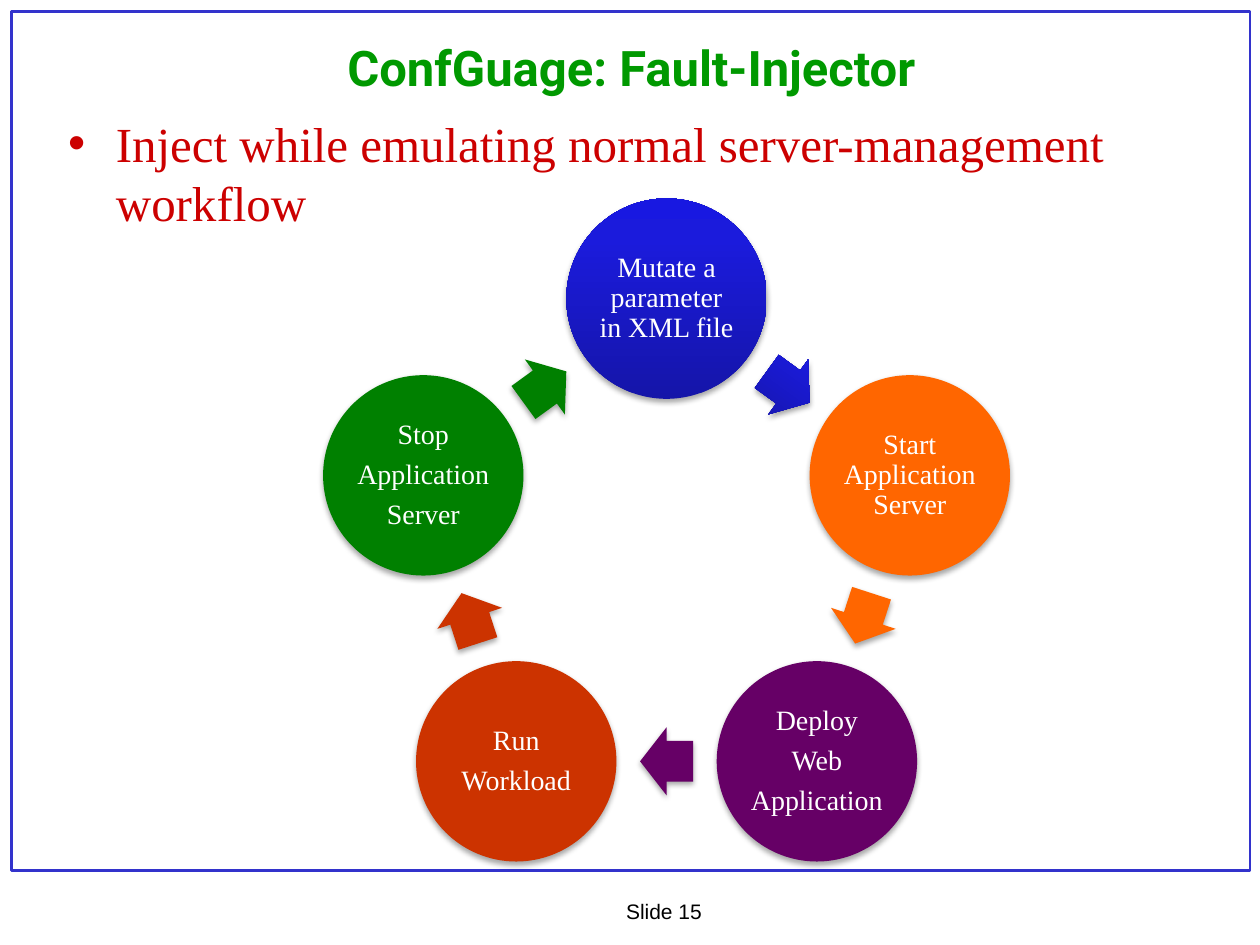
"""Build the fault-injector slide with its five-step workflow cycle."""
import math
from lxml import etree
from pptx import Presentation, util as u
from pptx.dml.color import RGBColor
from pptx.enum import shapes, text
from pptx.oxml import parse_xml
from pptx.oxml.ns import nsdecls, qn

COLORS = {
    "frame": "3333CC", "title": "009900", "body": "CC0000",
    "footer": "000000", "label": "FFFFFF", "start": "FF6600",
    "deploy": "660066", "run": "CC3300", "stop": "008000",
}
MUTATE_STOPS = [(0, "1515A9"), (80, "1B1BDC"), (100, "1818E1")]
STEPS = [
    ("mutate", ["Mutate a parameter in XML file"]),
    ("start", ["Start Application Server"]),
    ("deploy", ["Deploy", "Web", "Application"]),
    ("run", ["Run", "Workload"]),
    ("stop", ["Stop", "Application", "Server"]),
]
CENTER_X, CENTER_Y, RADIUS = 5.29, 4.4, 2.03
CIRCLE = 1.59
ARROW_WIDTH, ARROW_HEIGHT = 0.42, 0.54
TURN = 360 / len(STEPS)


def write(paragraph, words, font, size, color, bold=False):
    run = paragraph.add_run()
    run.text = words
    run.font.name = font
    run.font.size = u.Pt(size)
    run.font.bold = bold
    run.font.color.rgb = RGBColor.from_string(COLORS[color])


def add_step_shape(kind, name, angle, distance, width, height):
    x = CENTER_X + distance * math.sin(math.radians(angle))
    y = CENTER_Y - distance * math.cos(math.radians(angle))
    shape = cycle.shapes.add_shape(
        kind, u.Inches(x - width / 2), u.Inches(y - height / 2),
        u.Inches(width), u.Inches(height))
    shape.line.fill.background()
    properties = shape.fill._xPr
    if name == "mutate":
        stops = "".join(
            f'<a:gs pos="{position * 1000}"><a:srgbClr val="{color}"/></a:gs>'
            for position, color in MUTATE_STOPS)
        properties.find(qn("a:prstGeom")).addnext(parse_xml(
            f'<a:gradFill rotWithShape="1" {nsdecls("a")}><a:gsLst>{stops}'
            '</a:gsLst><a:lin ang="16200000" scaled="0"/></a:gradFill>'))
    else:
        shape.fill.solid()
        shape.fill.fore_color.rgb = RGBColor.from_string(COLORS[name])
    properties.append(parse_xml(
        f'<a:effectLst {nsdecls("a")}><a:outerShdw blurRad="40000" '
        'dist="23000" dir="5400000" rotWithShape="0"><a:srgbClr val="000000">'
        '<a:alpha val="35000"/></a:srgbClr></a:outerShdw></a:effectLst>'))
    return shape


presentation = Presentation()
presentation.slide_width = u.Inches(10)
presentation.slide_height = u.Inches(7.5)
slide = presentation.slides.add_slide(presentation.slide_layouts[1])

title, body = slide.placeholders
title.left, title.top = u.Inches(0.24), u.Inches(0.24)
title.width, title.height = u.Inches(9.54), u.Inches(0.58)
title.text_frame.auto_size = text.MSO_AUTO_SIZE.NONE
title.text_frame.vertical_anchor = text.MSO_ANCHOR.MIDDLE
paragraph = title.text_frame.paragraphs[0]
paragraph.alignment = text.PP_ALIGN.CENTER
write(paragraph, "ConfGuage: Fault-Injector", "Roboto", 28, "title", True)

body.left, body.top = u.Inches(0.44), u.Inches(0.85)
body.width, body.height = u.Inches(9.56), u.Inches(5.91)
body.text_frame.auto_size = text.MSO_AUTO_SIZE.NONE
paragraph = body.text_frame.paragraphs[0]
bullet_properties = paragraph._p.get_or_add_pPr()
bullet_properties.set("marL", str(u.Inches(0.38)))
bullet_properties.set("indent", str(-u.Inches(0.38)))
etree.SubElement(bullet_properties, qn("a:buChar")).set("char", "•")
paragraph.space_before = u.Pt(0)
write(paragraph, "Inject while emulating normal server-management workflow",
      "Times New Roman", 28, "body")

frame = slide.shapes.add_shape(
    shapes.MSO_SHAPE.RECTANGLE, u.Inches(0.09), u.Inches(0.09),
    u.Inches(9.83), u.Inches(6.82))
frame.shadow.inherit = False
frame.fill.background()
frame.line.color.rgb = RGBColor.from_string(COLORS["frame"])
frame.line.width = u.Pt(1.5)

footer = slide.shapes.add_textbox(
    u.Inches(4.87), u.Inches(7.08), u.Inches(0.82), u.Inches(0.3))
footer.text_frame.word_wrap = False
write(footer.text_frame.paragraphs[0], "Slide 15", "Arial", 12, "footer")

cycle = slide.shapes.add_group_shape()
for index, (name, lines) in enumerate(STEPS):
    angle = index * TURN
    circle = add_step_shape(
        shapes.MSO_SHAPE.OVAL, name, angle, RADIUS, CIRCLE, CIRCLE)
    label = circle.text_frame
    label.word_wrap = True
    label.vertical_anchor = text.MSO_ANCHOR.MIDDLE
    label.margin_left = label.margin_right = u.Inches(0.02)
    label.margin_top = label.margin_bottom = u.Inches(0.02)
    for number, line in enumerate(lines):
        paragraph = label.add_paragraph() if number else label.paragraphs[0]
        paragraph.alignment = text.PP_ALIGN.CENTER
        paragraph.line_spacing = 0.9
        paragraph.space_after = u.Pt(5.6)
        write(paragraph, line, "Times New Roman", 16, "label")

    middle = angle + TURN / 2
    arrow = add_step_shape(
        shapes.MSO_SHAPE.RIGHT_ARROW, name, middle,
        RADIUS * math.cos(math.radians(TURN / 2)), ARROW_WIDTH, ARROW_HEIGHT)
    arrow.adjustments[0] = 0.6
    arrow.adjustments[1] = 0.5
    arrow.rotation = middle

presentation.save("out.pptx")
